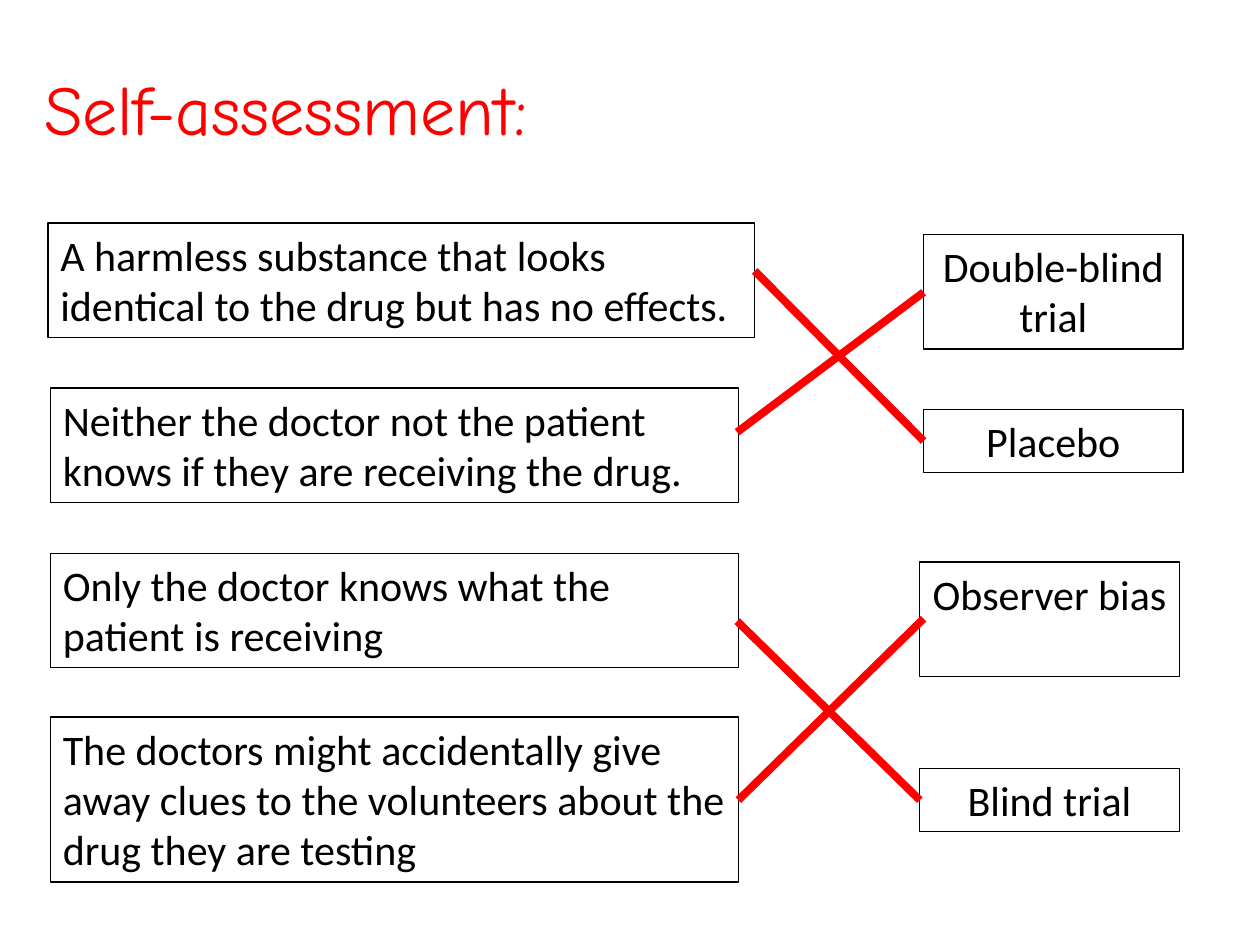
from dataclasses import dataclass

from lxml.etree import SubElement
from pptx import Presentation
from pptx.dml.color import RGBColor
from pptx.enum.shapes import MSO_CONNECTOR, MSO_SHAPE
from pptx.enum.text import MSO_ANCHOR, MSO_AUTO_SIZE, PP_ALIGN
from pptx.oxml.ns import qn
from pptx.util import Inches, Pt


@dataclass(frozen=True)
class Theme:
    """Colours, fonts and sizes of the slide."""
    ink: RGBColor = RGBColor(0, 0, 0)
    accent: RGBColor = RGBColor(255, 0, 0)
    title_font: str = "Comic Neue"
    body_font: str = "Calibri"
    title_size: int = 40
    body_size: int = 24
    border: float = 0.75
    match_width: float = 4.5


THEME = Theme()

DEFINITIONS = [
    ("A harmless substance that looks identical to the drug but has no effects.",
     (0.38, 1.77, 5.61, 0.91)),
    ("Neither the doctor not the patient knows if they are receiving the drug.",
     (0.4, 3.08, 5.46, 0.91)),
    ("Only the doctor knows what the patient is receiving",
     (0.4, 4.39, 5.46, 0.91)),
    ("The doctors might accidentally give away clues to the volunteers about "
     "the drug they are testing",
     (0.4, 5.69, 5.46, 1.31)),
]
TERMS = [
    ("Double-blind trial", (7.33, 1.86, 2.06, 0.91)),
    ("Placebo", (7.33, 3.25, 2.06, 0.5)),
    ("Observer bias", (7.3, 4.46, 2.06, 0.91)),
    ("Blind trial", (7.3, 6.1, 2.06, 0.5)),
]
MATCHES = [
    ((5.85, 3.43), (7.33, 2.32)),
    ((5.86, 6.35), (7.33, 4.91)),
    ((5.85, 4.93), (7.3, 6.35)),
    ((5.99, 2.15), (7.33, 3.5)),
]


def write_text(shape, text, *, font=THEME.body_font, size=THEME.body_size,
               color=THEME.ink, align=PP_ALIGN.LEFT, anchor=MSO_ANCHOR.TOP,
               side_margin=0.1):
    """Write one formatted paragraph into a shape."""
    frame = shape.text_frame
    frame.word_wrap = True
    frame.auto_size = MSO_AUTO_SIZE.NONE
    frame.vertical_anchor = anchor
    frame.margin_left = frame.margin_right = Inches(side_margin)
    frame.margin_top = frame.margin_bottom = Inches(0.05)
    para = frame.paragraphs[0]
    para.alignment = align
    span = para.add_run()
    span.text = text
    span.font.name = font
    span.font.size = Pt(size)
    span.font.color.rgb = color


def place_title(page, text, bounds):
    """Move the title placeholder to its bounds and write it."""
    title = page.shapes.title
    title.left, title.top, title.width, title.height = map(Inches, bounds)
    write_text(title, text, font=THEME.title_font, size=THEME.title_size,
               color=THEME.accent, anchor=MSO_ANCHOR.MIDDLE)


def add_cards(page, cards, **text_format):
    """Draw a column of outlined text boxes."""
    for text, bounds in cards:
        box = page.shapes.add_shape(MSO_SHAPE.RECTANGLE, *map(Inches, bounds))
        box.shadow.inherit = False
        box.fill.background()
        box.line.color.rgb = THEME.ink
        box.line.width = Pt(THEME.border)
        write_text(box, text, **text_format)


def add_matches(page, matches):
    """Draw the lines that join definitions to terms."""
    for start, end in matches:
        line = page.shapes.add_connector(
            MSO_CONNECTOR.STRAIGHT, *map(Inches, start + end))
        line.line.color.rgb = THEME.accent
        line.line.width = Pt(THEME.match_width)
        SubElement(line.element.spPr, qn("a:effectLst"))


def main():
    """Build and save the deck."""
    deck = Presentation()
    deck.slide_width, deck.slide_height = Inches(10), Inches(7.5)
    page = deck.slides.add_slide(deck.slide_layouts.get_by_name("Title Only"))
    place_title(page, "Self-assessment:", (0.25, 0.47, 5.16, 0.77))
    add_cards(page, DEFINITIONS)
    add_cards(page, TERMS, align=PP_ALIGN.CENTER, side_margin=0.05)
    add_matches(page, MATCHES)
    deck.save("out.pptx")


if __name__ == "__main__":
    main()
